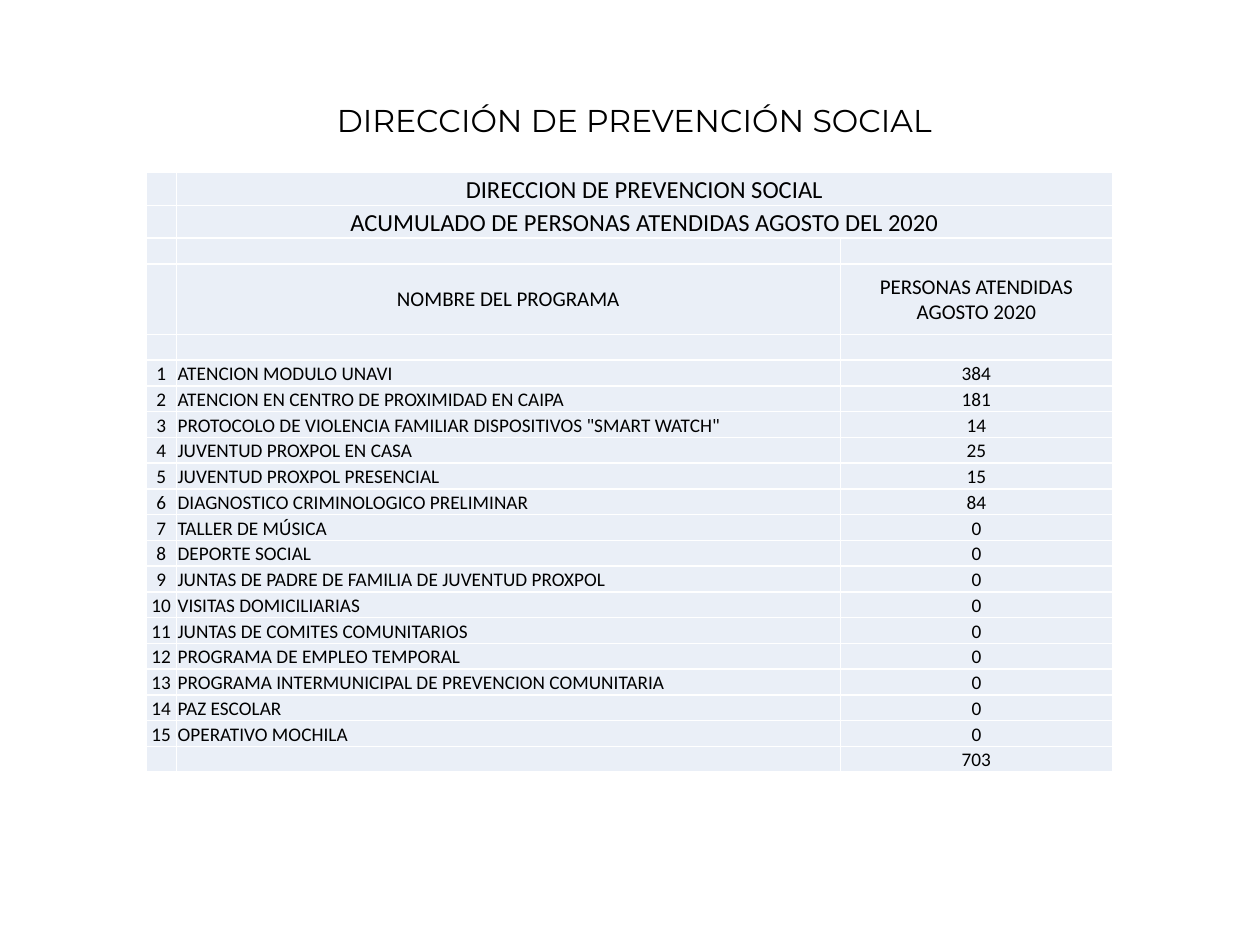
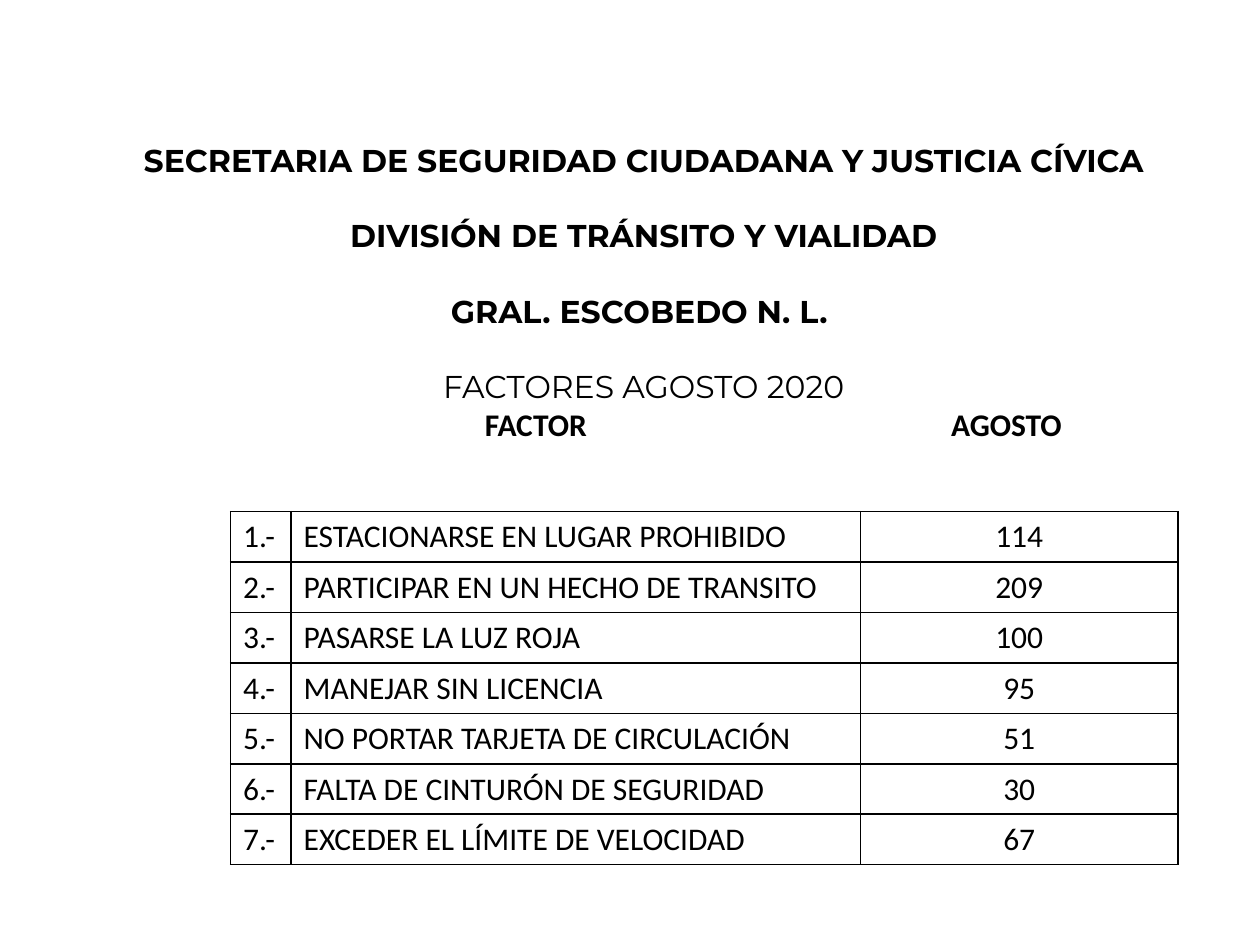
import pptx
import pptx.util
import pptx.dml.color
import pptx.enum.text
import pptx.oxml.ns
from lxml import etree

Inches, Pt = pptx.util.Inches, pptx.util.Pt
RGBColor = pptx.dml.color.RGBColor
ALIGN = pptx.enum.text.PP_ALIGN
ANCHOR = pptx.enum.text.MSO_ANCHOR
qn = pptx.oxml.ns.qn

BLACK = RGBColor(0x00, 0x00, 0x00)
WHITE = RGBColor(0xFF, 0xFF, 0xFF)
PALE_BLUE = RGBColor(0xEA, 0xEF, 0xF7)
TITLE_FONT, BODY_FONT = "Montserrat", "Calibri"

PROGRAMS = [
    ("ATENCION MODULO UNAVI", 384),
    ("ATENCION EN CENTRO DE PROXIMIDAD EN CAIPA", 181),
    ('PROTOCOLO DE VIOLENCIA FAMILIAR DISPOSITIVOS "SMART WATCH"', 14),
    ("JUVENTUD PROXPOL EN CASA", 25),
    ("JUVENTUD PROXPOL PRESENCIAL", 15),
    ("DIAGNOSTICO CRIMINOLOGICO PRELIMINAR", 84),
    ("TALLER DE MÚSICA", 0),
    ("DEPORTE SOCIAL", 0),
    ("JUNTAS DE PADRE DE FAMILIA DE JUVENTUD PROXPOL", 0),
    ("VISITAS DOMICILIARIAS", 0),
    ("JUNTAS DE COMITES COMUNITARIOS", 0),
    ("PROGRAMA DE EMPLEO TEMPORAL", 0),
    ("PROGRAMA INTERMUNICIPAL DE PREVENCION COMUNITARIA", 0),
    ("PAZ ESCOLAR", 0),
    ("OPERATIVO MOCHILA", 0),
]
FACTORS = [
    ("ESTACIONARSE EN LUGAR PROHIBIDO", 114),
    ("PARTICIPAR EN UN HECHO DE TRANSITO", 209),
    ("PASARSE LA LUZ ROJA", 100),
    ("MANEJAR SIN LICENCIA", 95),
    ("NO PORTAR TARJETA DE CIRCULACIÓN", 51),
    ("FALTA DE CINTURÓN DE SEGURIDAD", 30),
    ("EXCEDER EL LÍMITE DE VELOCIDAD", 67),
]


def write(p, text, size=18, font=BODY_FONT, bold=False, align=ALIGN.LEFT,
          before=0, tabs=()):
    """Format a paragraph and put its text in one run."""
    p.alignment = align
    if before:
        p.space_before = Pt(before)
    if tabs:
        tab_list = etree.SubElement(p._p.get_or_add_pPr(), qn("a:tabLst"))
        for pos in tabs:
            etree.SubElement(tab_list, qn("a:tab"), pos=str(Inches(pos)), algn="l")
    if not text:
        # An empty cell keeps a small line so that its row stays low
        etree.SubElement(p._p, qn("a:endParaRPr"), sz=str(size * 100))
        return
    r = p.add_run()
    r.text = text
    r.font.size, r.font.name, r.font.bold = Pt(size), font, bold
    r.font.color.rgb = BLACK


def add_heading(slide, box, lines):
    """Text box with one paragraph per (text, format) pair."""
    sp = slide.shapes.add_textbox(*map(Inches, box))
    tf = sp.text_frame
    tf.word_wrap = True
    tf.auto_size = pptx.enum.text.MSO_AUTO_SIZE.SHAPE_TO_FIT_TEXT
    for i, (text, fmt) in enumerate(lines):
        p = tf.add_paragraph() if i else tf.paragraphs[0]
        write(p, text, **fmt)


def set_borders(cell, color):
    tc_pr = cell._tc.get_or_add_tcPr()
    for i, side in enumerate("LRTB"):
        ln = etree.Element(qn("a:ln" + side), w=str(Pt(1)))
        fill = etree.SubElement(ln, qn("a:solidFill"))
        etree.SubElement(fill, qn("a:srgbClr"), val=str(color))
        tc_pr.insert(i, ln)


def add_grid(slide, box, cols, rows, border, fill=None):
    """Plain table with the given column widths, row heights and borders."""
    frame = slide.shapes.add_table(len(rows), len(cols), *map(Inches, box))
    table = frame.table
    table.first_row = table.horz_banding = False
    for col, width in zip(table.columns, cols):
        col.width = Inches(width)
    for row, height in zip(table.rows, rows):
        row.height = Inches(height)
    for cell in table.iter_cells():
        if fill is None:
            cell.fill.background()
        else:
            cell.fill.solid()
            cell.fill.fore_color.rgb = fill
        set_borders(cell, border)
    return table


def add_program_table(slide, box):
    height = box[3]
    row_h = (height - 2 * 0.26 - 0.56) / (len(PROGRAMS) + 3)
    rows = [0.26, 0.26, row_h, 0.56] + [row_h] * (len(PROGRAMS) + 2)
    table = add_grid(slide, box, [0.24, 5.27, 2.16], rows, WHITE, PALE_BLUE)

    content = [
        ("", "DIRECCION DE PREVENCION SOCIAL", ""),
        ("", "ACUMULADO DE PERSONAS ATENDIDAS AGOSTO DEL 2020", ""),
        ("", "", ""),
        ("", "NOMBRE DEL PROGRAMA", "PERSONAS ATENDIDAS AGOSTO 2020"),
        ("", "", ""),
    ]
    first = len(content)
    content += [(str(n), name, str(count))
                for n, (name, count) in enumerate(PROGRAMS, 1)]
    content.append(("", "", str(sum(count for _, count in PROGRAMS))))
    sizes = {0: 14, 1: 14, 3: 12}

    for i, texts in enumerate(content):
        for j, text in enumerate(texts):
            cell = table.cell(i, j)
            cell.margin_left = cell.margin_right = cell.margin_top = Inches(0.01)
            cell.margin_bottom = 0
            cell.vertical_anchor = ANCHOR.MIDDLE if i == 3 else ANCHOR.BOTTOM
            align = ALIGN.LEFT if i >= first and j == 1 else ALIGN.CENTER
            size = sizes.get(i, 11) if text else 8
            write(cell.text_frame.paragraphs[0], text, size=size, align=align)
    # Title rows span the name and count columns
    for i in (0, 1):
        table.cell(i, 1).merge(table.cell(i, 2))


def add_factor_table(slide, box):
    rows = [box[3] / len(FACTORS)] * len(FACTORS)
    table = add_grid(slide, box, [0.48, 4.52, 2.52], rows, BLACK)
    for i, (name, count) in enumerate(FACTORS):
        for j, text in enumerate((f"{i + 1}.-", name, str(count))):
            write(table.cell(i, j).text_frame.paragraphs[0], text,
                  align=ALIGN.CENTER if j == 2 else ALIGN.LEFT)


def build_prevention_slide(slide):
    title = dict(font=TITLE_FONT, align=ALIGN.CENTER)
    add_heading(slide, (1.61, 0.75, 6.85, 0.4),
                [("DIRECCIÓN DE PREVENCIÓN SOCIAL", title)])
    add_program_table(slide, (1.16, 1.37, 7.67, 4.76))


def build_traffic_slide(slide):
    title = dict(font=TITLE_FONT, align=ALIGN.CENTER)
    spaced = dict(title, before=21.5)
    add_heading(slide, (0.88, 1.07, 8.46, 2.83), [
        ("SECRETARIA DE SEGURIDAD CIUDADANA Y JUSTICIA CÍVICA", dict(title, bold=True)),
        ("DIVISIÓN DE TRÁNSITO Y VIALIDAD", dict(spaced, bold=True)),
        ("GRAL. ESCOBEDO N. L. ", dict(spaced, bold=True)),
        ("FACTORES AGOSTO 2020", spaced),
        # Column headings over the table
        ("\tFACTOR\tAGOSTO", dict(bold=True, tabs=(2.87, 6.57))),
    ])
    add_factor_table(slide, (1.83, 4.06, 7.52, 2.8))


def main():
    prs = pptx.Presentation()
    prs.slide_width, prs.slide_height = Inches(10), Inches(7.5)
    for build in (build_prevention_slide, build_traffic_slide):
        build(prs.slides.add_slide(prs.slide_layouts[6]))
    prs.save("out.pptx")


if __name__ == "__main__":
    main()
